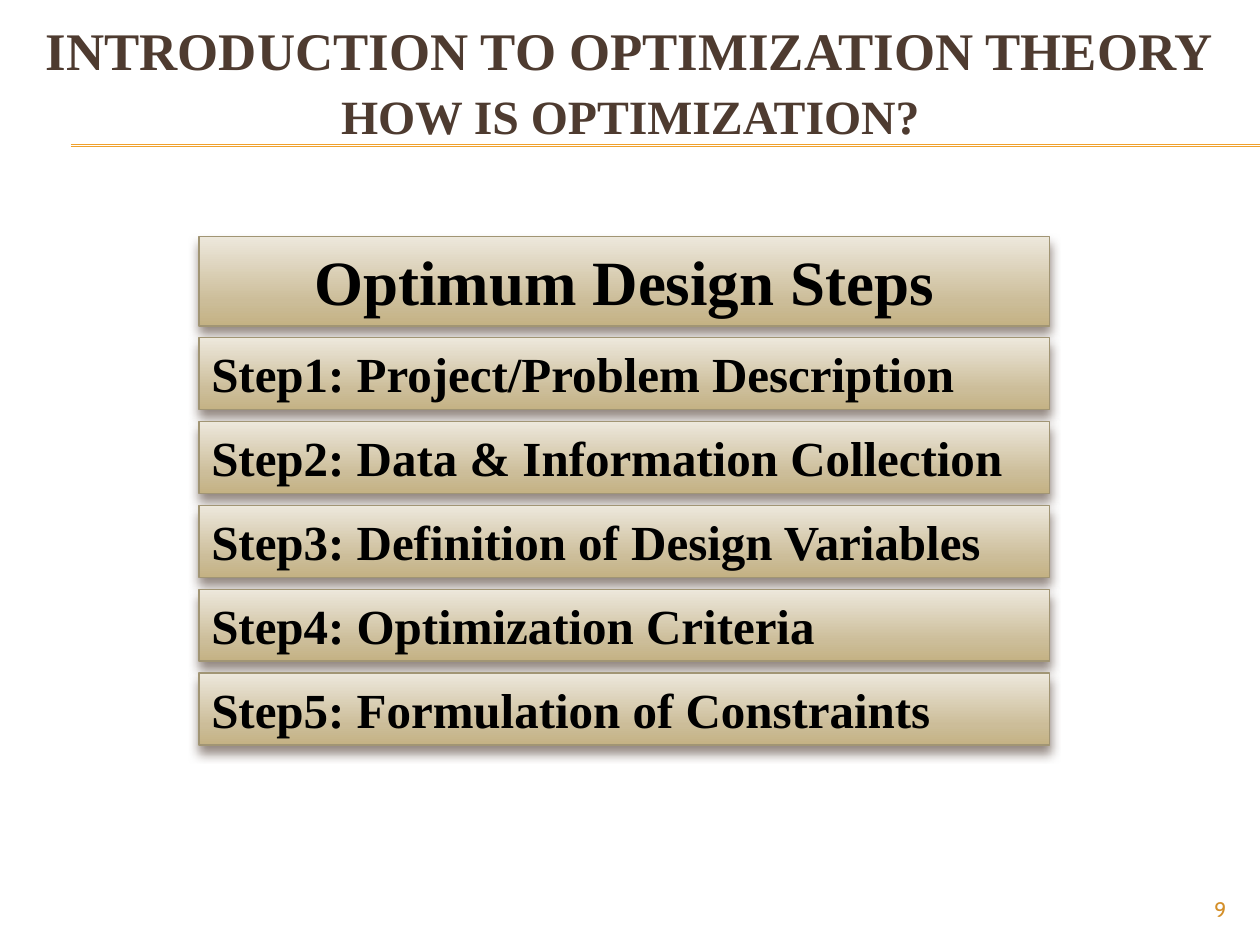
from copy import deepcopy

from lxml.etree import SubElement
from pptx import Presentation
from pptx.dml.color import RGBColor
from pptx.enum.shapes import MSO_CONNECTOR, MSO_SHAPE
from pptx.enum.text import MSO_ANCHOR, MSO_AUTO_SIZE, PP_ALIGN
from pptx.oxml.ns import qn
from pptx.util import Cm, Pt

COLORS = {
    "heading": "4E3B30",
    "rule": "F0A22E",
    "number": "D48F29",
    "text": "000000",
    "edge": "A19574",
    "shadow": "4E3B30",
    "top": "EDE8DC",
    "middle": "CCBD99",
    "bottom": "C4B284",
}
STEPS = [
    "Step1: Project/Problem Description",
    "Step2: Data & Information Collection",
    "Step3: Definition of Design Variables",
    "Step4: Optimization Criteria",
    "Step5: Formulation of Constraints",
]
BAR_LEFT, BAR_WIDTH = 4.01, 17.15
STEP_TOP, STEP_PITCH, STEP_HEIGHT = 6.81, 1.69, 1.45


class SlideBuilder:
    serif = "Times New Roman"
    sans = "Cabin"

    def __init__(self, page):
        self.page = page

    def color(self, name):
        return RGBColor.from_string(COLORS[name])

    def add_span(self, para, text, size, color, font=serif, bold=True):
        span = para.add_run()
        span.text = text
        span.font.size = Pt(size)
        span.font.name = font
        span.font.bold = bold
        span.font.color.rgb = self.color(color)

    def rule(self, left, right, top):
        line = self.page.shapes.add_connector(
            MSO_CONNECTOR.STRAIGHT, Cm(left), Cm(top), Cm(right), Cm(top))
        line.line.color.rgb = self.color("rule")
        line.line.width = Pt(0.75)
        SubElement(line._element.spPr, qn("a:effectLst"))

    def text_box(self, left, top, width, height, align):
        box = self.page.shapes.add_textbox(Cm(left), Cm(top), Cm(width), Cm(height))
        frame = box.text_frame
        frame.word_wrap = True
        frame.vertical_anchor = MSO_ANCHOR.MIDDLE
        frame.margin_top = frame.margin_bottom = 0
        para = frame.paragraphs[0]
        para.alignment = align
        return para

    def title(self, first, second):
        para = self.text_box(0.32, 0.2, 24.77, 2.74, PP_ALIGN.CENTER)
        para.line_spacing = 1.1
        self.add_span(para, first, 30.2, "heading")
        para.add_line_break()
        self.add_span(para, second, 27.3, "heading")

    def page_number(self, text):
        para = self.text_box(22.86, 17.98, 2.11, 0.69, PP_ALIGN.RIGHT)
        self.add_span(para, text, 12, "number", self.sans, False)

    def bar(self, top, height, text, size, align):
        bar = self.page.shapes.add_shape(
            MSO_SHAPE.RECTANGLE, Cm(BAR_LEFT), Cm(top), Cm(BAR_WIDTH), Cm(height))
        self.shade(bar)
        self.cast_shadow(bar)
        bar.line.color.rgb = self.color("edge")
        bar.line.width = Pt(0.79)
        frame = bar.text_frame
        frame.word_wrap = True
        frame.auto_size = MSO_AUTO_SIZE.SHAPE_TO_FIT_TEXT
        frame.vertical_anchor = MSO_ANCHOR.TOP
        para = frame.paragraphs[0]
        para.alignment = align
        self.add_span(para, text, size, "text")

    def shade(self, bar):
        bar.fill.gradient()
        bar.fill.gradient_angle = 270
        stop_list = bar._element.spPr.find(qn("a:gradFill")).find(qn("a:gsLst"))
        stop_list.append(deepcopy(stop_list[-1]))
        stops = zip(bar.fill.gradient_stops, (0, 0.72, 1), ("top", "middle", "bottom"))
        for stop, position, name in stops:
            stop.position = position
            stop.color.rgb = self.color(name)

    def cast_shadow(self, bar):
        bar.shadow.inherit = False
        effects = bar._element.spPr.find(qn("a:effectLst"))
        shadow = SubElement(
            effects, qn("a:outerShdw"), blurRad=str(Pt(6)), dist=str(Pt(4)),
            dir="5400000", rotWithShape="0")
        tint = SubElement(shadow, qn("a:srgbClr"), val=COLORS["shadow"])
        SubElement(tint, qn("a:alpha"), val="60000")


def main():
    deck = Presentation()
    deck.slide_width, deck.slide_height = Cm(25.4), Cm(19.05)
    builder = SlideBuilder(deck.slides.add_slide(deck.slide_layouts[6]))
    for top in (2.92, 2.95):
        builder.rule(1.43, 25.4, top)
    builder.page_number("9")
    builder.bar(4.77, 1.8, "Optimum Design Steps", 36, PP_ALIGN.CENTER)
    for index, step in enumerate(STEPS):
        top = STEP_TOP + index * STEP_PITCH
        builder.bar(top, STEP_HEIGHT, step, 28, PP_ALIGN.LEFT)
    builder.title("INTRODUCTION TO OPTIMIZATION THEORY", "HOW IS OPTIMIZATION?")
    deck.save("out.pptx")


if __name__ == "__main__":
    main()
